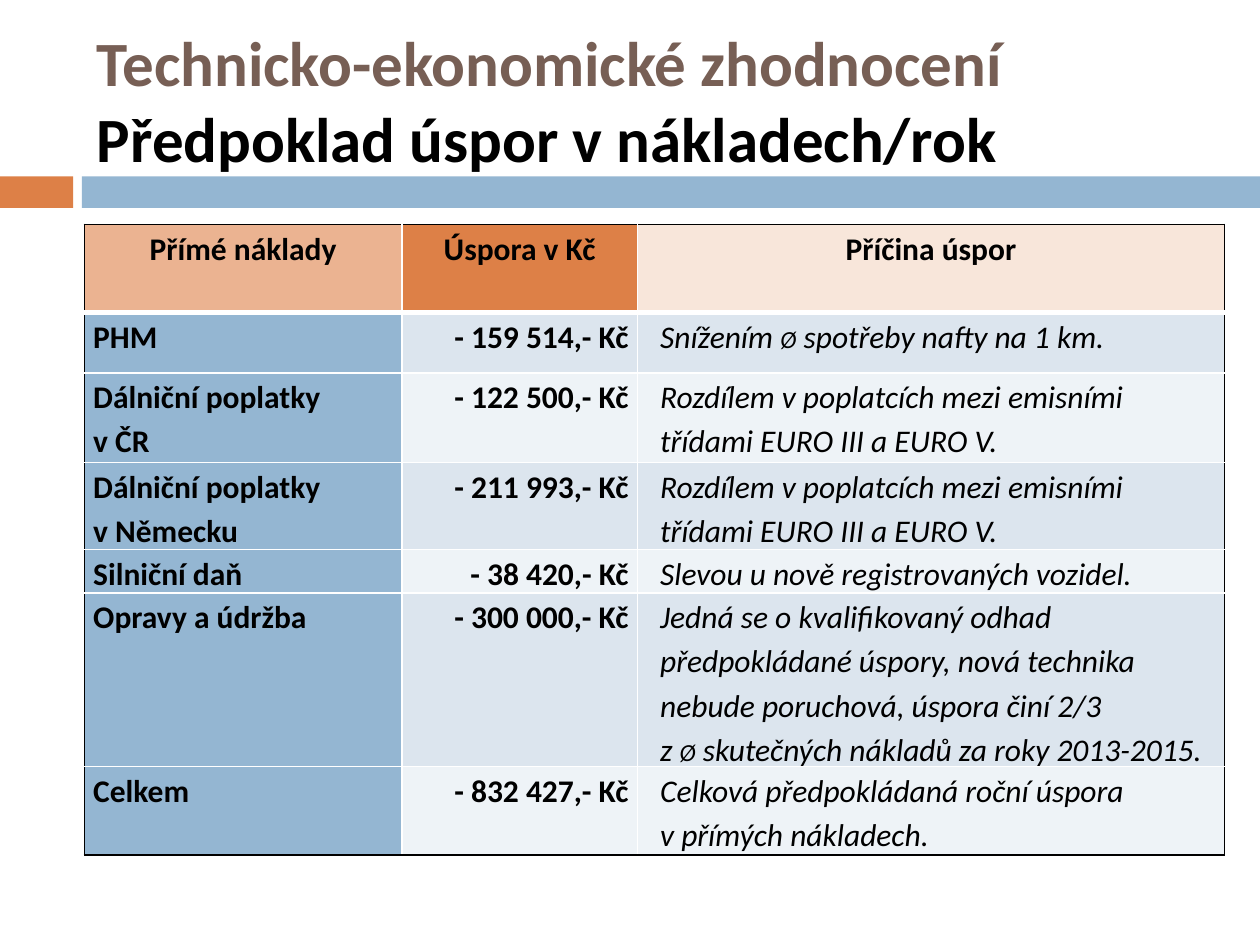
from dataclasses import dataclass

from lxml import etree
from pptx import Presentation
from pptx.dml.color import RGBColor
from pptx.enum.shapes import MSO_SHAPE
from pptx.enum.text import MSO_ANCHOR, PP_ALIGN
from pptx.oxml.ns import qn
from pptx.util import Inches, Pt

RECTANGLE = MSO_SHAPE.RECTANGLE
MIDDLE = MSO_ANCHOR.MIDDLE
LEFT, CENTER, RIGHT = PP_ALIGN.LEFT, PP_ALIGN.CENTER, PP_ALIGN.RIGHT

FONT = "Calibri"
COLORS = {
    "black": "000000",
    "white": "FFFFFF",
    "brown": "775F55",
    "orange": "DD8047",
    "orange_mid": "EBB391",
    "orange_pale": "F8E6DA",
    "blue": "94B6D2",
    "band_dark": "DCE5EE",
    "band_light": "EEF3F7",
}
COLUMN_WIDTHS = (2.52, 1.87, 4.66)
CELL_MARGIN = 0.07
REASON_MARGIN = 0.18


@dataclass(frozen=True)
class Bar:
    left: float
    width: float
    color: str


@dataclass(frozen=True)
class Saving:
    height: float
    cost: str
    amount: str
    reason: str


BARS = (Bar(0, 0.58, "orange"), Bar(0.65, 9.35, "blue"))
HEADER_HEIGHT = 0.7
HEADERS = (
    ("Přímé náklady", "orange_mid"),
    ("Úspora v Kč", "orange"),
    ("Příčina úspor", "orange_pale"),
)
TOLL_REASON = "Rozdílem v poplatcích mezi emisními\ntřídami EURO III a EURO V."
SAVINGS = (
    Saving(0.48, "PHM", "- 159 514,- Kč", "Snížením Ø spotřeby nafty na 1 km."),
    Saving(0.71, "Dálniční poplatky\nv ČR", "- 122 500,- Kč", TOLL_REASON),
    Saving(0.68, "Dálniční poplatky\nv Německu", "- 211 993,- Kč", TOLL_REASON),
    Saving(0.33, "Silniční daň", "- 38 420,- Kč",
           "Slevou u nově registrovaných vozidel."),
    Saving(1.33, "Opravy a údržba", "- 300 000,- Kč",
           "Jedná se o kvalifikovaný odhad\n"
           "předpokládané úspory, nová technika\n"
           "nebude poruchová, úspora činí 2/3\n"
           "z Ø skutečných nákladů za roky 2013-2015."),
    Saving(0.7, "Celkem", "- 832 427,- Kč",
           "Celková předpokládaná roční úspora\nv přímých nákladech."),
)


def rgb(name: str) -> RGBColor:
    return RGBColor.from_string(COLORS[name])


def add_span(para, text: str, *, size: float = 18, color: str = "black",
             bold: bool = False, italic: bool = False) -> None:
    span = para.add_run()
    span.text = text
    span.font.name = FONT
    span.font.size = Pt(size)
    span.font.bold = bold
    span.font.italic = italic
    span.font.color.rgb = rgb(color)


def add_bar(page, bar: Bar) -> None:
    shape = page.shapes.add_shape(RECTANGLE, Inches(bar.left), Inches(1.4),
                                  Inches(bar.width), Inches(0.25))
    shape.shadow.inherit = False
    shape.fill.solid()
    shape.fill.fore_color.rgb = rgb(bar.color)
    shape.line.fill.background()


def add_title(page) -> None:
    box = page.shapes.add_textbox(Inches(0.67), Inches(0.25), Inches(8.92), Inches(1.08))
    frame = box.text_frame
    frame.word_wrap = True
    frame.vertical_anchor = MIDDLE
    para = frame.paragraphs[0]
    add_span(para, "Technicko-ekonomické zhodnocení", size=36, color="brown", bold=True)
    para.add_line_break()
    add_span(para, "Předpoklad úspor v nákladech/rok", size=36, bold=True)


def fill_cell(cell, text: str, *, fill: str, align=LEFT, bold: bool = True,
              italic: bool = False, margin_left: float = CELL_MARGIN) -> None:
    """Write one paragraph per line, with the average sign set smaller."""
    cell.fill.solid()
    cell.fill.fore_color.rgb = rgb(fill)
    cell.margin_left = Inches(margin_left)
    cell.margin_right = Inches(CELL_MARGIN)
    cell.margin_top = cell.margin_bottom = 0
    frame = cell.text_frame
    for index, line in enumerate(text.split("\n")):
        para = frame.add_paragraph() if index else frame.paragraphs[0]
        para.alignment = align
        para.line_spacing = 1.15
        before, sign, after = line.partition("Ø")
        for part, size in ((before, 18), (sign, 14), (after, 18)):
            if part:
                add_span(para, part, size=size, bold=bold, italic=italic)


def set_borders(cell, row: int, column: int, last_row: int, last_column: int) -> None:
    """Black on the table's outer edge, white inside, thick under the header."""
    outer_edges = {
        "a:lnL": column == 0,
        "a:lnR": column == last_column,
        "a:lnT": row == 0,
        "a:lnB": row == last_row,
    }
    properties = cell._tc.get_or_add_tcPr()
    for index, (tag, outer) in enumerate(outer_edges.items()):
        under_header = (tag, row) in (("a:lnB", 0), ("a:lnT", 1))
        line = etree.Element(qn(tag), w=str(Pt(3 if under_header else 1)))
        solid = etree.SubElement(line, qn("a:solidFill"))
        etree.SubElement(solid, qn("a:srgbClr"),
                         val=COLORS["black" if outer else "white"])
        properties.insert(index, line)


def add_savings_table(page) -> None:
    heights = [HEADER_HEIGHT] + [saving.height for saving in SAVINGS]
    last_row, last_column = len(heights) - 1, len(COLUMN_WIDTHS) - 1
    table = page.shapes.add_table(
        len(heights), len(COLUMN_WIDTHS), Inches(0.67), Inches(1.78),
        Inches(sum(COLUMN_WIDTHS)), Inches(sum(heights))).table
    for column, width in zip(table.columns, COLUMN_WIDTHS):
        column.width = Inches(width)
    for row, height in zip(table.rows, heights):
        row.height = Inches(height)

    for column, (text, color) in enumerate(HEADERS):
        fill_cell(table.cell(0, column), text, fill=color, align=CENTER)
    for row, saving in enumerate(SAVINGS, start=1):
        band = "band_dark" if row % 2 else "band_light"
        fill_cell(table.cell(row, 0), saving.cost, fill="blue")
        fill_cell(table.cell(row, 1), saving.amount, fill=band, align=RIGHT)
        fill_cell(table.cell(row, 2), saving.reason, fill=band, bold=False,
                  italic=True, margin_left=REASON_MARGIN)
    for row in range(last_row + 1):
        for column in range(last_column + 1):
            set_borders(table.cell(row, column), row, column, last_row, last_column)


def main() -> None:
    deck = Presentation()
    deck.slide_width, deck.slide_height = Inches(10), Inches(7.5)
    page = deck.slides.add_slide(deck.slide_layouts[6])
    for bar in BARS:
        add_bar(page, bar)
    add_title(page)
    add_savings_table(page)
    deck.save("out.pptx")


if __name__ == "__main__":
    main()
